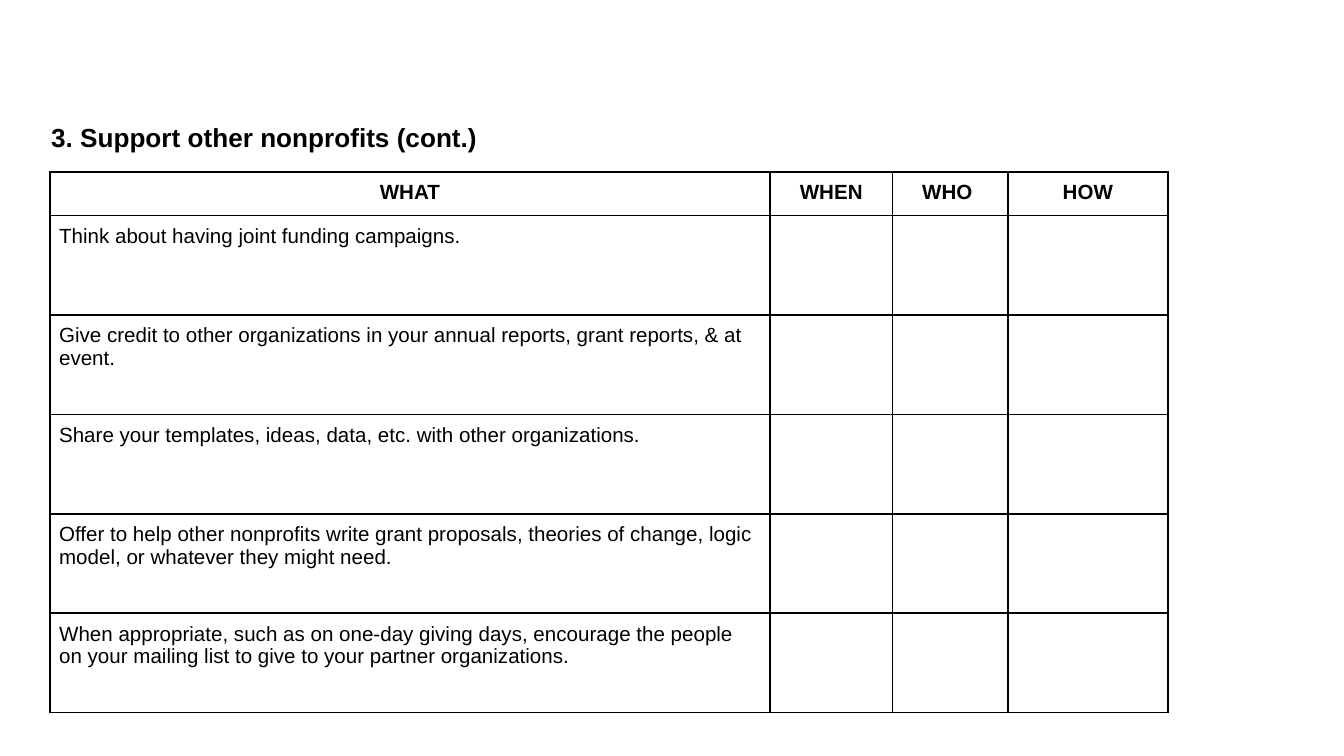
from dataclasses import dataclass

import pptx
import pptx.dml.color
import pptx.enum.text
import pptx.oxml.ns
import pptx.table
import pptx.util
import lxml.etree

Inches = pptx.util.Inches
Alignment = pptx.enum.text.PP_ALIGN


@dataclass(frozen=True)
class Theme:
    font: str = "Arial"
    ink: str = "000000"
    title_size: float = 14
    table_size: float = 11
    border_width: float = 1
    cell_margin: float = 0.07


@dataclass(frozen=True)
class Column:
    heading: str
    width: float


THEME = Theme()
COLUMNS = [
    Column("WHAT", 5.36),
    Column("WHEN", 0.91),
    Column("WHO ", 0.86),
    Column("HOW", 1.19),
]
ACTIONS = [
    "Think about having joint funding campaigns.",
    "Give credit to other organizations in your annual reports, grant reports, & at event.",
    "Share your templates, ideas, data, etc. with other organizations.",
    "Offer to help other nonprofits write grant proposals, theories of change, "
    "logic model, or whatever they might need.",
    "When appropriate, such as on one-day giving days, encourage the people "
    "on your mailing list to give to your partner organizations.",
]
SLIDE_WIDTH = 10
SLIDE_HEIGHT = SLIDE_WIDTH * 9 / 16
HEADER_HEIGHT = 0.32
ACTION_HEIGHT = 0.74


def write_text(text_frame, text: str, size: float, bold: bool, alignment) -> None:
    paragraph = text_frame.paragraphs[0]
    paragraph.alignment = alignment
    run = paragraph.add_run()
    run.text = text
    run.font.name = THEME.font
    run.font.size = pptx.util.Pt(size)
    run.font.bold = bold
    run.font.color.rgb = pptx.dml.color.RGBColor.from_string(THEME.ink)


def format_cell(cell) -> None:
    """Give a cell its margins, four border lines and no fill."""
    margin = Inches(THEME.cell_margin)
    cell.margin_left = cell.margin_right = margin
    cell.margin_top = cell.margin_bottom = margin
    qualified = pptx.oxml.ns.qn
    properties = cell._tc.get_or_add_tcPr()
    for side in ("a:lnL", "a:lnR", "a:lnT", "a:lnB"):
        line = lxml.etree.SubElement(properties, qualified(side))
        line.set("w", str(pptx.util.Pt(THEME.border_width)))
        fill = lxml.etree.SubElement(line, qualified("a:solidFill"))
        lxml.etree.SubElement(fill, qualified("a:srgbClr")).set("val", THEME.ink)
    cell.fill.background()


def add_title(slide) -> None:
    title = slide.shapes.title
    title.left, title.top = Inches(0.28), Inches(0.85)
    title.width, title.height = Inches(5.16), Inches(0.34)
    text_frame = title.text_frame
    text_frame.word_wrap = True
    text_frame.auto_size = pptx.enum.text.MSO_AUTO_SIZE.SHAPE_TO_FIT_TEXT
    text_frame.vertical_anchor = pptx.enum.text.MSO_ANCHOR.TOP
    write_text(text_frame, "3. Support other nonprofits (cont.)",
               THEME.title_size, True, Alignment.LEFT)


def add_action_table(slide) -> None:
    width = sum(column.width for column in COLUMNS)
    height = HEADER_HEIGHT + ACTION_HEIGHT * len(ACTIONS)
    table: pptx.table.Table = slide.shapes.add_table(
        len(ACTIONS) + 1, len(COLUMNS),
        Inches(0.37), Inches(1.28), Inches(width), Inches(height)).table
    table.first_row = table.horz_banding = False

    for row in table.rows:
        row.height = Inches(ACTION_HEIGHT)
    table.rows[0].height = Inches(HEADER_HEIGHT)
    for cell in table.iter_cells():
        format_cell(cell)

    # Header row
    for index, column in enumerate(COLUMNS):
        table.columns[index].width = Inches(column.width)
        write_text(table.cell(0, index).text_frame, column.heading,
                   THEME.table_size, True, Alignment.CENTER)

    # Actions, with the planning columns left open
    for index, action in enumerate(ACTIONS, start=1):
        write_text(table.cell(index, 0).text_frame, action,
                   THEME.table_size, False, Alignment.LEFT)


def main() -> None:
    presentation = pptx.Presentation()
    presentation.slide_width = Inches(SLIDE_WIDTH)
    presentation.slide_height = Inches(SLIDE_HEIGHT)
    slide = presentation.slides.add_slide(presentation.slide_layouts[5])
    add_action_table(slide)
    add_title(slide)
    presentation.save("out.pptx")


if __name__ == "__main__":
    main()
